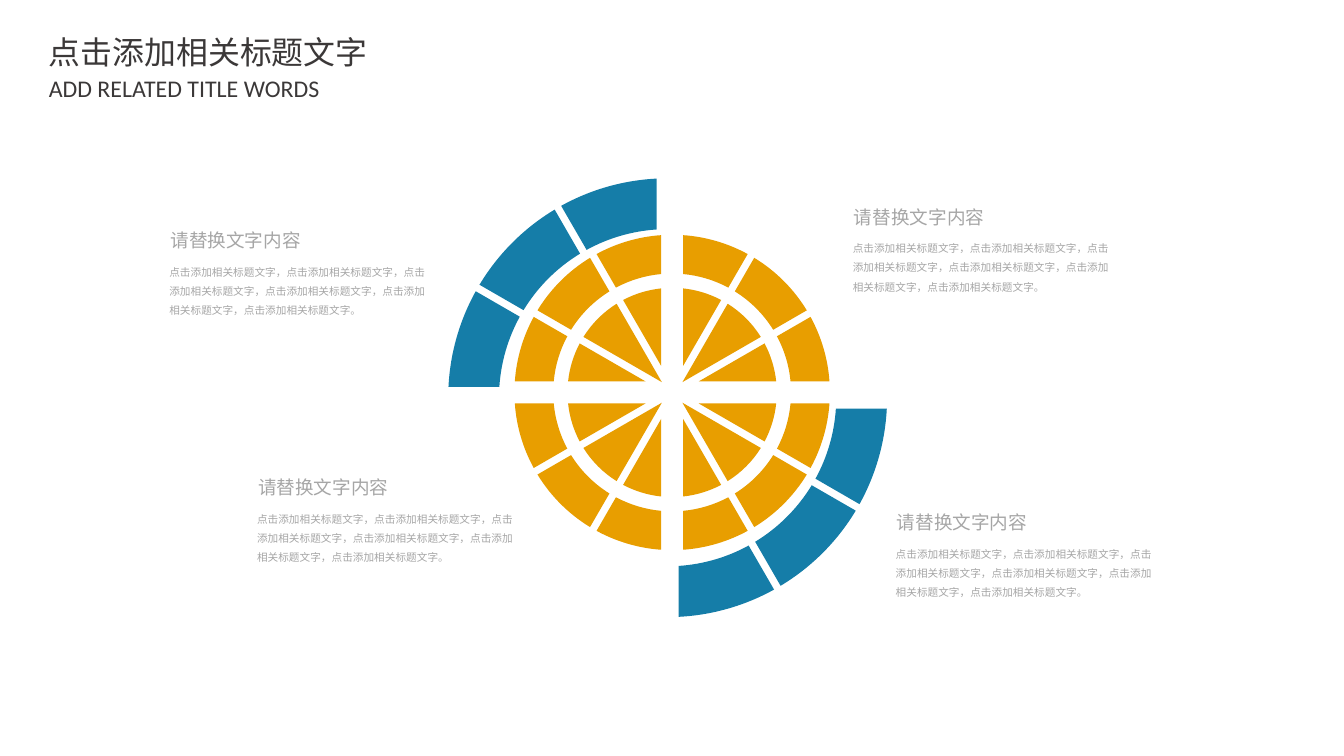
from math import asin, cos, radians, sin, tan

from lxml import etree
from pptx import Presentation
from pptx.dml.color import RGBColor
from pptx.enum.text import MSO_AUTO_SIZE
from pptx.oxml.ns import qn
from pptx.util import Cm, Pt

FIT_TEXT = MSO_AUTO_SIZE.SHAPE_TO_FIT_TEXT

SLIDE_SIZE = (35.71, 20.09)
BLUE, ORANGE, GREY, DARK = "157DA8", "E89E00", "A6A6A6", "3B3838"

HEADINGS = [
    ("点击添加相关标题文字", (1.03, 0.74, 9.09, 1.3), "title"),
    ("ADD RELATED TITLE WORDS", (1.03, 1.83, 7.8, 1.04), "subtitle"),
]
CALLOUT_TITLE = "请替换文字内容"
CALLOUT_BODY = (
    "点击添加相关标题文字，点击添加相关标题文字，点击添加相关标题文字，"
    "点击添加相关标题文字，点击添加相关标题文字，点击添加相关标题文字。"
)
CALLOUT_PLACES = [(4.26, 5.84), (6.59, 12.4), (22.42, 5.22), (23.56, 13.34)]
BODY_DROP = 0.92

STYLES = {
    "title": {"font": "Noto Sans CJK SC", "size": 24, "color": DARK,
              "inset": 0.27, "wrap": False, "spacing": 1.0},
    "subtitle": {"font": "Calibri", "size": 18, "color": DARK,
                 "inset": 0.27, "wrap": False, "spacing": 1.0},
    "callout": {"font": "Arial", "size": 14, "color": GREY,
                "inset": 0.27, "wrap": True, "spacing": 1.2},
    "body": {"font": "Noto Sans CJK SC", "size": 8, "color": GREY,
             "inset": 0.24, "wrap": True, "spacing": 1.5},
}

ALL_AROUND = range(0, 360, 30)
OPPOSITE_QUARTERS = [0, 30, 60, 180, 210, 240]
RINGS = [
    {"center": (17.74, 10.57), "inner": 4.48, "outer": 5.83,
     "starts": OPPOSITE_QUARTERS, "color": BLUE},
    {"center": (17.86, 10.43), "inner": 3.16, "outer": 4.19,
     "starts": ALL_AROUND, "color": ORANGE},
    {"center": (17.86, 10.43), "inner": 0, "outer": 2.78,
     "starts": ALL_AROUND, "color": ORANGE},
]
SECTOR = 30
AXIS_GAP, SPOKE_GAP = 0.29, 0.1


def rgb(value):
    return RGBColor.from_string(value)


def half_gap(angle):
    return AXIS_GAP if angle % 90 == 0 else SPOKE_GAP


def arc(radius, start, end):
    first = radians(start) + asin(half_gap(start) / radius)
    last = radians(end) - asin(half_gap(end) / radius)
    reach = 4 / 3 * tan((last - first) / 4)
    handles = [(first, 0), (first, reach), (last, -reach), (last, 0)]
    return [(radius * (cos(angle) - pull * sin(angle)),
             radius * (sin(angle) + pull * cos(angle))) for angle, pull in handles]


def apex(start, end):
    near, far = half_gap(start), half_gap(end)
    a, b = radians(start), radians(end)
    return ((near * cos(b) + far * cos(a)) / sin(b - a),
            (near * sin(b) + far * sin(a)) / sin(b - a))


def sector_outline(ring, start):
    end = start + SECTOR
    inside = arc(ring["inner"], start, end)[::-1] if ring["inner"] else [apex(start, end)]
    left, top = ring["center"]
    return [(Cm(left + x), Cm(top + y)) for x, y in arc(ring["outer"], start, end) + inside]


def bend_arcs(shape, points_per_sector):
    segments = list(shape._element.iter(qn("a:lnTo")))
    count = points_per_sector - 1
    for sector in range(0, len(segments), count):
        for begin in range(sector, sector + count - 2, 4):
            handles = segments[begin:begin + 3]
            curve = etree.Element(qn("a:cubicBezTo"))
            handles[0].addprevious(curve)
            for handle in handles:
                curve.append(handle[0])
                handle.getparent().remove(handle)


def add_ring(page, ring):
    first, *others = [sector_outline(ring, start) for start in ring["starts"]]
    builder = page.shapes.build_freeform(*first[0])
    builder.add_line_segments(first[1:], close=True)
    for outline in others:
        builder.move_to(*outline[0])
        builder.add_line_segments(outline[1:], close=True)
    shape = builder.convert_to_shape()
    bend_arcs(shape, len(first))
    shape.shadow.inherit = False
    shape.fill.solid()
    shape.fill.fore_color.rgb = rgb(ring["color"])
    shape.line.fill.background()


def add_text(page, text, place, style_name):
    style = STYLES[style_name]
    frame = page.shapes.add_textbox(*map(Cm, place)).text_frame
    frame_format = {
        "margin_left": Cm(style["inset"]), "margin_right": Cm(style["inset"]),
        "margin_top": Cm(0.13), "margin_bottom": Cm(0.13),
        "word_wrap": style["wrap"], "auto_size": FIT_TEXT,
    }
    for name, value in frame_format.items():
        setattr(frame, name, value)
    para = frame.paragraphs[0]
    para.line_spacing = style["spacing"]
    span = para.add_run()
    span.text = text
    span.font.size = Pt(style["size"])
    span.font.color.rgb = rgb(style["color"])
    span.font.name = style["font"]
    etree.SubElement(span.font._element, qn("a:ea"), typeface=style["font"])


def main():
    deck = Presentation()
    deck.slide_width, deck.slide_height = map(Cm, SLIDE_SIZE)
    page = deck.slides.add_slide(deck.slide_layouts[6])
    for ring in RINGS:
        add_ring(page, ring)
    for left, top in CALLOUT_PLACES:
        add_text(page, CALLOUT_BODY, (left, top + BODY_DROP, 7.37, 1.78), "body")
        add_text(page, CALLOUT_TITLE, (left, top, 6.76, 0.99), "callout")
    for text, place, style_name in HEADINGS:
        add_text(page, text, place, style_name)
    deck.save("out.pptx")


if __name__ == "__main__":
    main()
